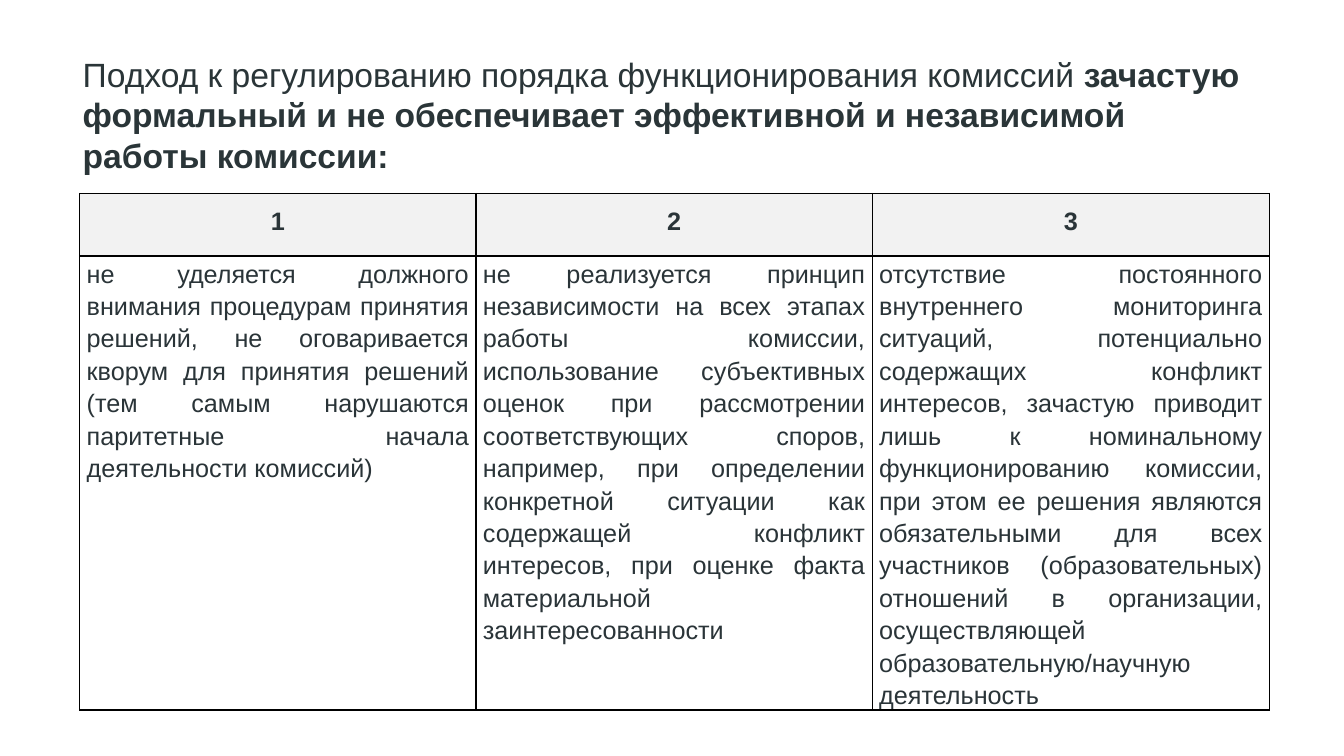
from dataclasses import dataclass

from lxml.etree import SubElement
from pptx import Presentation
from pptx.dml.color import RGBColor
from pptx.enum.text import MSO_ANCHOR, MSO_AUTO_SIZE, PP_ALIGN
from pptx.oxml.ns import qn
from pptx.util import Inches, Pt


@dataclass(frozen=True)
class Theme:
    font: str = "Arial"
    title_color: str = "2A3538"
    table_color: str = "2A3438"
    header_fill: str = "F2F2F2"
    border_color: str = "000000"
    border_width: float = 1
    title_size: float = 24
    table_size: float = 18


class SlideBuilder:
    def __init__(self, slide, theme):
        self.slide = slide
        self.theme = theme

    def style_run(self, run, size, color, bold):
        run.font.name = self.theme.font
        run.font.size = Pt(size)
        run.font.bold = bold
        run.font.color.rgb = RGBColor.from_string(color)

    def add_title(self, parts, left, top, width, height):
        title = self.slide.shapes.title
        title.left, title.top = Inches(left), Inches(top)
        title.width, title.height = Inches(width), Inches(height)
        frame = title.text_frame
        frame.word_wrap = True
        frame.auto_size = MSO_AUTO_SIZE.NONE
        frame.vertical_anchor = MSO_ANCHOR.MIDDLE
        frame.margin_left = frame.margin_right = Inches(0.03)
        frame.margin_top = frame.margin_bottom = Inches(0.03)
        paragraph = frame.paragraphs[0]
        paragraph.alignment = PP_ALIGN.LEFT
        for text, bold in parts:
            run = paragraph.add_run()
            run.text = text
            self.style_run(run, self.theme.title_size, self.theme.title_color, bold)

    def add_borders(self, cell):
        properties = cell._tc.get_or_add_tcPr()
        for position, side in enumerate(("a:lnL", "a:lnR", "a:lnT", "a:lnB")):
            line = SubElement(properties, qn(side), w=str(Pt(self.theme.border_width)))
            fill = SubElement(line, qn("a:solidFill"))
            SubElement(fill, qn("a:srgbClr"), val=self.theme.border_color)
            properties.insert(position, line)

    def fill_cell(self, cell, text, is_header):
        cell.margin_left = cell.margin_right = Inches(0.07)
        cell.margin_top = cell.margin_bottom = Inches(0)
        cell.vertical_anchor = MSO_ANCHOR.TOP
        if is_header:
            cell.fill.solid()
            cell.fill.fore_color.rgb = RGBColor.from_string(self.theme.header_fill)
        else:
            cell.fill.background()
        cell.text_frame.text = text
        paragraph = cell.text_frame.paragraphs[0]
        paragraph.alignment = PP_ALIGN.CENTER if is_header else PP_ALIGN.JUSTIFY
        paragraph.line_spacing = 1.5 if is_header else 1.15
        self.style_run(paragraph.runs[0], self.theme.table_size, self.theme.table_color, is_header)
        self.add_borders(cell)

    def add_table(self, rows, left, top, column_widths, row_heights):
        table = self.slide.shapes.add_table(
            len(rows), len(column_widths), Inches(left), Inches(top),
            Inches(sum(column_widths)), Inches(sum(row_heights)),
        ).table
        table.horz_banding = False
        for column, width in zip(table.columns, column_widths):
            column.width = Inches(width)
        for row, height in zip(table.rows, row_heights):
            row.height = Inches(height)
        for row_index, texts in enumerate(rows):
            for column_index, text in enumerate(texts):
                self.fill_cell(table.cell(row_index, column_index), text, row_index == 0)


TITLE = [
    ("Подход к регулированию порядка функционирования комиссий ", False),
    ("зачастую формальный и не обеспечивает эффективной и независимой работы комиссии:", True),
]
PROBLEMS = [
    "не уделяется должного внимания процедурам принятия решений, не оговаривается кворум "
    "для принятия решений (тем самым нарушаются паритетные начала деятельности комиссий)",
    "не реализуется принцип независимости на всех этапах работы комиссии, использование "
    "субъективных оценок при рассмотрении соответствующих споров, например, при определении "
    "конкретной ситуации как содержащей конфликт интересов, при оценке факта материальной "
    "заинтересованности",
    "отсутствие постоянного внутреннего мониторинга ситуаций, потенциально содержащих конфликт "
    "интересов, зачастую приводит лишь к номинальному функционированию комиссии, при этом ее "
    "решения являются обязательными для всех участников (образовательных) отношений в "
    "организации, осуществляющей образовательную/научную деятельность",
]


def main():
    presentation = Presentation()
    presentation.slide_width = Inches(13.33)
    presentation.slide_height = Inches(7.5)
    slide = presentation.slides.add_slide(presentation.slide_layouts[5])
    builder = SlideBuilder(slide, Theme())
    builder.add_title(TITLE, 0.79, 0.35, 11.65, 1.57)
    numbers = [str(number) for number in range(1, len(PROBLEMS) + 1)]
    builder.add_table([numbers, PROBLEMS], 0.79, 1.92, [3.93, 3.93, 3.94], [0.62, 3.81])
    presentation.save("out.pptx")


if __name__ == "__main__":
    main()
